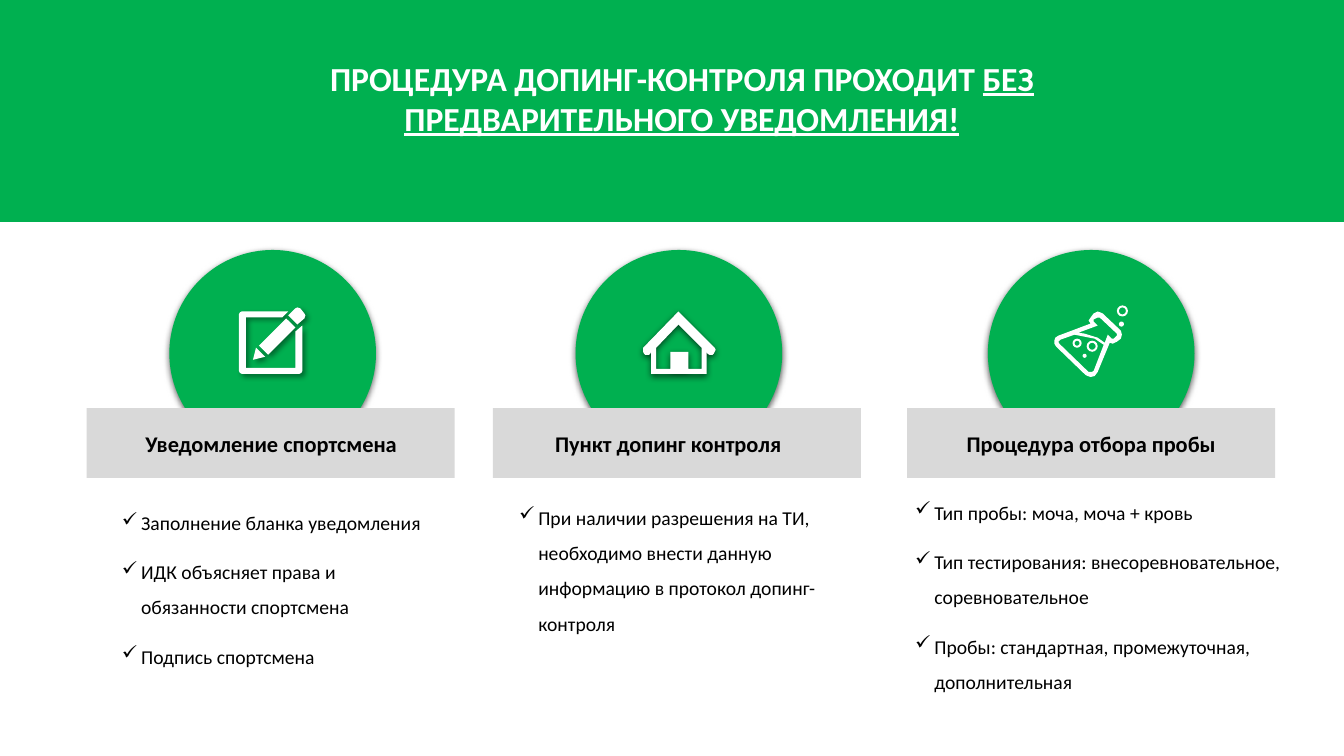
import pptx
import pptx.util
import pptx.dml.color
import pptx.enum.shapes
import pptx.enum.text
import pptx.oxml
import pptx.oxml.ns

PX = 9144  # EMU in one px, 100 px to the inch
SHAPE = pptx.enum.shapes.MSO_SHAPE
ALIGN = pptx.enum.text.PP_ALIGN
THEME = {
    "green": pptx.dml.color.RGBColor.from_string("00B050"),
    "gray": pptx.dml.color.RGBColor.from_string("D9D9D9"),
    "white": pptx.dml.color.RGBColor.from_string("FFFFFF"),
    "black": pptx.dml.color.RGBColor.from_string("000000"),
    "font": "Calibri",
    "title": pptx.util.Pt(24),
    "label": pptx.util.Pt(16),
    "body": pptx.util.Pt(14),
}
# Shadows: opacity in percent, blur and distance in points, angle in degrees
SOFT_SHADOW = (63, 5, 1.5, 90)
PENCIL_SHADOW = (40, 4, 3, 45)

presentation = pptx.Presentation()
presentation.slide_width = round(13.333 * 100 * PX)
presentation.slide_height = 750 * PX
slide = presentation.slides.add_slide(presentation.slide_layouts[5])


def paint(shape, color, shadow=None):
    """Plain fill without a line, with an optional outer shadow."""
    shape.fill.solid()
    shape.fill.fore_color.rgb = THEME[color]
    shape.line.fill.background()
    shape.shadow.inherit = False
    if shadow:
        opacity, blur, distance, angle = shadow
        effects = shape.element.spPr.find(pptx.oxml.ns.qn("a:effectLst"))
        effects.append(pptx.oxml.parse_xml(
            f'<a:outerShdw {pptx.oxml.ns.nsdecls("a")} blurRad="{blur * 12700}" '
            f'dist="{round(distance * 12700)}" dir="{angle * 60000}" algn="t" rotWithShape="0">'
            f'<a:srgbClr val="000000"><a:alpha val="{opacity * 1000}"/></a:srgbClr></a:outerShdw>'))


def write(shape, paragraphs, font_format, paragraph_format, wrap=True):
    """Fill a text frame; each paragraph is a list of (text, underline)."""
    frame = shape.text_frame
    frame_format = {"word_wrap": wrap, "vertical_anchor": pptx.enum.text.MSO_ANCHOR.TOP,
                    "auto_size": pptx.enum.text.MSO_AUTO_SIZE.NONE}
    for side in ("left", "top", "right", "bottom"):
        frame_format[f"margin_{side}"] = 5 * PX
    for name, value in frame_format.items():
        setattr(frame, name, value)
    for index, runs in enumerate(paragraphs):
        paragraph = frame.add_paragraph() if index else frame.paragraphs[0]
        for name, value in paragraph_format.items():
            setattr(paragraph, name, value)
        for text, underline in runs:
            run = paragraph.add_run()
            run.text = text
            run.font.name = THEME["font"]
            run.font.underline = underline
            run.font.color.rgb = THEME[font_format["color"]]
            run.font.size = THEME[font_format["size"]]
            run.font.bold = font_format["bold"]


# Columns: circle left, bar left, label left and width, list box, list items
COLUMNS = [
    (168, 86, (138, 262), (116, 490, 309, 165), "Уведомление спортсмена",
     ["Заполнение бланка уведомления",
      "ИДК объясняет права и обязанности спортсмена",
      "Подпись спортсмена"]),
    (571, 489, (545, 236), (510, 485, 333, 148), "Пункт допинг контроля",
     ["При наличии разрешения на ТИ, необходимо внести данную информацию "
      "в протокол допинг-контроля"]),
    (980, 900, (953, 259), (903, 480, 377, 261), "Процедура отбора пробы",
     ["Тип пробы: моча, моча + кровь",
      "Тип тестирования: внесоревновательное, соревновательное",
      "Пробы: стандартная, промежуточная, дополнительная"]),
]
for circle_left, bar_left, (label_left, label_width), list_box, label, items in COLUMNS:
    circle = slide.shapes.add_shape(
        SHAPE.OVAL, circle_left * PX, 248 * PX, 205 * PX, 205 * PX)
    paint(circle, "green", SOFT_SHADOW)
    bar = slide.shapes.add_shape(
        SHAPE.RECTANGLE, bar_left * PX, 405 * PX, 365 * PX, 69 * PX)
    paint(bar, "gray")

    label_box = slide.shapes.add_textbox(
        label_left * PX, 422 * PX, label_width * PX, 33 * PX)
    write(label_box, [[(label, None)]],
          {"size": "label", "color": "black", "bold": True},
          {"alignment": ALIGN.CENTER}, wrap=False)

    item_box = slide.shapes.add_textbox(*(length * PX for length in list_box))
    write(item_box, [[(item, None)] for item in items],
          {"size": "body", "color": "black", "bold": False},
          {"line_spacing": 1.5, "space_before": pptx.util.Pt(10)})
    for paragraph in item_box.text_frame.paragraphs:
        properties = paragraph._p.get_or_add_pPr()
        properties.set("marL", str(19 * PX))
        properties.set("indent", str(-19 * PX))
        properties.append(pptx.oxml.parse_xml(
            f'<a:buChar {pptx.oxml.ns.nsdecls("a")} char="✓"/>'))

# Header band with the title in front of it
band = slide.shapes.add_shape(SHAPE.RECTANGLE, 0, 0, presentation.slide_width, 220 * PX)
paint(band, "green")
band.line.color.rgb = THEME["green"]
band.line.width = pptx.util.Pt(1)

title = slide.shapes.title
band.element.addnext(title.element)
title_place = {"left": 201, "top": 52, "width": 951, "height": 91}
for name, value in title_place.items():
    setattr(title, name, value * PX)
write(title, [[("ПРОЦЕДУРА ДОПИНГ-КОНТРОЛЯ ПРОХОДИТ ", None),
               ("БЕЗ ПРЕДВАРИТЕЛЬНОГО УВЕДОМЛЕНИЯ!", True)]],
      {"size": "title", "color": "white", "bold": True}, {"alignment": ALIGN.CENTER})

# Icon outlines: each icon is a list of closed contours in px
HOUSE = [
    [(708, 344), (673, 309), (639, 344), (638, 345), (638, 349), (639, 351), (640, 352),
     (644, 352), (645, 351), (646, 349), (646, 371), (701, 371), (701, 349), (702, 351),
     (704, 352), (707, 352), (708, 351), (709, 349), (710, 347), (709, 345)],
    [(696, 366), (683, 366), (683, 349), (665, 349), (665, 366), (651, 366), (651, 345),
     (673, 322), (696, 345)],
]
FLASK = [
    [(1094, 311), (1092, 310), (1089, 309), (1087, 310), (1085, 311), (1082, 315),
     (1080, 318), (1082, 321), (1050, 333), (1047, 335), (1046, 338), (1046, 341),
     (1048, 344), (1077, 372), (1079, 373), (1082, 374), (1086, 373), (1089, 369),
     (1101, 340), (1104, 341), (1108, 339), (1112, 336), (1113, 332), (1112, 328)],
    [(1085, 368), (1083, 369), (1080, 369), (1051, 341), (1050, 339), (1052, 337),
     (1066, 332), (1076, 334), (1086, 336), (1095, 342)],
    [(1108, 333), (1105, 336), (1103, 336), (1099, 332), (1096, 340), (1089, 335),
     (1076, 331), (1070, 330), (1089, 323), (1085, 319), (1085, 317), (1089, 315),
     (1091, 315), (1108, 331)],
]
PENCIL = [
    [(302, 316), (295, 322), (286, 313), (293, 306), (295, 305), (298, 306), (302, 311),
     (303, 313)],
    [(254, 345), (263, 354), (251, 357)],
    [(293, 325), (266, 352), (257, 343), (284, 316)],
    [(244, 315), (244, 365), (293, 365), (293, 329), (300, 323), (300, 368), (299, 370),
     (297, 371), (240, 371), (238, 370), (237, 368), (237, 312), (238, 310), (240, 309),
     (286, 309), (280, 315)],
]
for contours, shadow in ((HOUSE, SOFT_SHADOW), (FLASK, None), (PENCIL, PENCIL_SHADOW)):
    builder = slide.shapes.build_freeform(*contours[0][0], scale=PX)
    for index, contour in enumerate(contours):
        if index:
            builder.move_to(*contour[0])
        builder.add_line_segments(contour[1:], close=True)
    paint(builder.convert_to_shape(), "white", shadow)

# Bubbles of the flask: left, top, diameter, ring thickness (0 for a solid dot)
for left, top, diameter, ring in ((1078, 338, 11, 2), (1108, 303, 11, 2), (1064, 336, 9, 2),
                                  (1074, 351, 4, 0), (1110, 319, 5, 0)):
    bubble = slide.shapes.add_shape(SHAPE.DONUT if ring else SHAPE.OVAL,
                                    left * PX, top * PX, diameter * PX, diameter * PX)
    if ring:
        bubble.adjustments[0] = ring / diameter
    paint(bubble, "white")

presentation.save("out.pptx")
